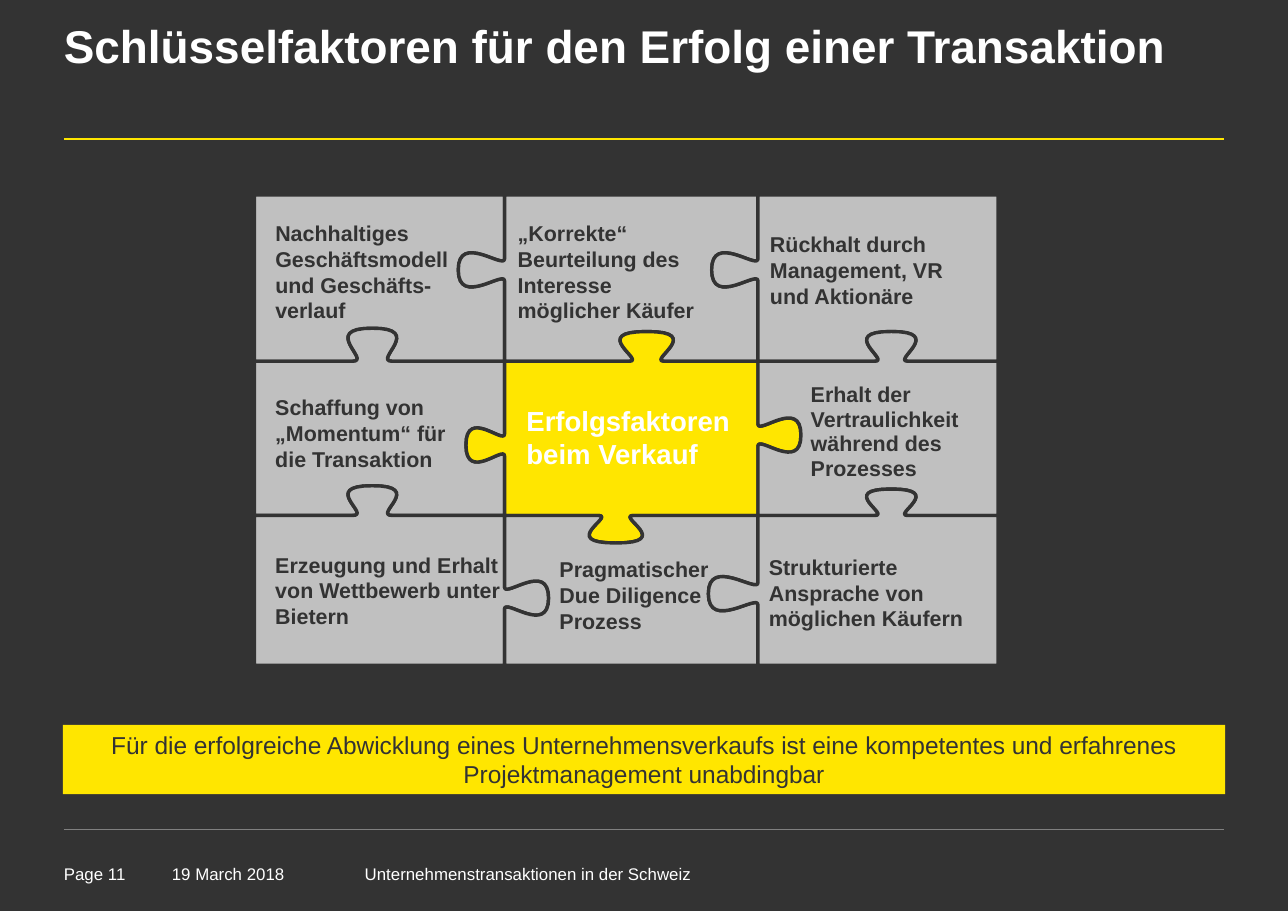
"""Build the puzzle slide on success factors of a company sale."""
import dataclasses
import itertools

import pptx
import pptx.dml.color
import pptx.enum.shapes
import pptx.enum.text
import pptx.oxml.ns
import pptx.util

EMU_PER_PX = 9144
DARK, GREY, YELLOW, WHITE, RULE_GREY = "333333", "C0C0C0", "FFE600", "FFFFFF", "808080"
COLUMN_EDGES = (231, 458, 688, 906)
ROW_EDGES = (177, 328, 468, 604)
CURVE_STEPS = 16
CENTER = pptx.enum.text.PP_ALIGN.CENTER
MIDDLE = pptx.enum.text.MSO_ANCHOR.MIDDLE

Point = tuple[float, float]


@dataclasses.dataclass(frozen=True)
class Knob:
    """A bulge in a seam; centre and reach run along it, tip lies across it."""
    upright: bool
    seam: int
    lane: int
    centre: int
    tip: int
    half: int = 10
    reach: int = 34


@dataclasses.dataclass(frozen=True)
class Label:
    """A block of text with its place in px and its look."""
    text: str
    left: int
    top: int
    width: int
    height: int
    size: int = 14
    color: str = DARK
    bold: bool = True
    spacing: float | None = None
    inset: tuple[int, int] = (10, 5)


@dataclasses.dataclass(frozen=True)
class Rule:
    """A horizontal line across the page."""
    top: int
    color: str
    weight: float


KNOBS = (
    Knob(True, 1, 0, 245, 416),
    Knob(True, 1, 1, 404, 423),
    Knob(True, 1, 2, 543, 498),
    Knob(True, 2, 0, 245, 646),
    Knob(True, 2, 1, 395, 727),
    Knob(True, 2, 2, 539, 643),
    Knob(False, 1, 0, 338, 298, 18, 48),
    Knob(False, 1, 1, 587, 301, 16, 53),
    Knob(False, 1, 2, 809, 301, 15, 49),
    Knob(False, 2, 0, 338, 441, 18, 48),
    Knob(False, 2, 1, 559, 493, 16, 53),
    Knob(False, 2, 2, 809, 444, 15, 49),
)
KNOB_AT = {(knob.upright, knob.seam, knob.lane): knob for knob in KNOBS}

RULES = (Rule(126, YELLOW, 1.5), Rule(753, RULE_GREY, 0.25))

FOOTER = {"size": 11, "color": WHITE, "bold": False, "inset": (0, 0)}
LABELS = (
    Label("Schlüsselfaktoren für den Erfolg einer Transaktion", 58, 24, 1052, 104,
          30, WHITE, spacing=0.85, inset=(0, 0)),
    Label("Nachhaltiges Geschäftsmodell und Geschäfts-verlauf", 240, 195, 192, 104),
    Label("„Korrekte“ Beurteilung des Interesse möglicher Käufer", 460, 195, 197, 104),
    Label("Rückhalt durch Management, VR und Aktionäre", 689, 205, 217, 81),
    Label("Schaffung von „Momentum“ für\ndie Transaktion", 240, 353, 226, 81),
    Label("Erfolgsfaktoren beim Verkauf", 468, 362, 213, 71, 18, WHITE),
    Label("Erhalt der Vertraulichkeit während des Prozesses", 726, 343, 179, 100,
          spacing=0.95),
    Label("Erzeugung und Erhalt von Wettbewerb unter Bietern", 240, 496, 226, 81),
    Label("Pragmatischer Due Diligence Prozess", 498, 500, 157, 81),
    Label("Strukturierte Ansprache von möglichen Käufern", 688, 498, 217, 81),
    Label("Page 11", 58, 784, 92, 24, **FOOTER),
    Label("19 March 2018", 156, 784, 152, 24, **FOOTER),
    Label("Unternehmenstransaktionen in der Schweiz", 331, 784, 439, 24, **FOOTER),
)
BANNER = Label("Für die erfolgreiche Abwicklung eines Unternehmensverkaufs ist eine "
               "kompetentes und erfahrenes Projektmanagement unabdingbar",
               57, 658, 1055, 63, 16, bold=False)


def px(length: float) -> pptx.util.Emu:
    """Turn px into EMU."""
    return pptx.util.Emu(round(length * EMU_PER_PX))


def rgb(color: str) -> pptx.dml.color.RGBColor:
    """Turn a hex string into a colour."""
    return pptx.dml.color.RGBColor.from_string(color)


def apply(target, values: dict) -> None:
    """Set each named attribute on the target."""
    for name, value in values.items():
        setattr(target, name, value)


def paint(fill, color: str) -> None:
    """Make a fill solid in one colour."""
    fill.solid()
    fill.fore_color.rgb = rgb(color)


def bezier(points: tuple[Point, ...]) -> list[Point]:
    """Sample a cubic curve, leaving out its start."""
    samples = []
    for step in range(1, CURVE_STEPS + 1):
        t = step / CURVE_STEPS
        weights = ((1 - t) ** 3, 3 * t * (1 - t) ** 2, 3 * t * t * (1 - t), t ** 3)
        samples.append(tuple(sum(weight * point[axis] for weight, point in zip(weights, points))
                             for axis in (0, 1)))
    return samples


def side(upright: bool, seam: int, lane: int) -> list[Point]:
    """Trace one side of a piece downwards or to the right."""
    across, along = (COLUMN_EDGES, ROW_EDGES) if upright else (ROW_EDGES, COLUMN_EDGES)
    base = across[seam]
    trace = [(along[lane], base)]
    knob = KNOB_AT.get((upright, seam, lane))
    if knob:
        centre, tip, half, reach = knob.centre, knob.tip, knob.half, knob.reach
        start, top, end = (centre - half, base), (centre, tip), (centre + half, base)
        trace.append(start)
        trace += bezier((start, (centre, base), (centre - reach, tip), top))
        trace += bezier((top, (centre + reach, tip), (centre, base), end))
    trace.append((along[lane + 1], base))
    return [(y, x) for x, y in trace] if upright else trace


def draw_piece(page, row: int, column: int, color: str) -> None:
    """Draw one puzzle piece with its four sides."""
    outline = (side(False, row, column) + side(True, column + 1, row)
               + side(False, row + 1, column)[::-1] + side(True, column, row)[::-1])
    points = [(px(x), px(y)) for x, y in outline]
    builder = page.shapes.build_freeform(*points[0], scale=1.0)
    builder.add_line_segments(points[1:], close=True)
    piece = builder.convert_to_shape()
    piece.shadow.inherit = False
    paint(piece.fill, color)
    paint(piece.line.fill, DARK)
    piece.line.width = pptx.util.Pt(2.25)


def write(box, label: Label, frame_format: dict, para_format: dict) -> None:
    """Fill a box with the text of a label."""
    across, down = (px(inset) for inset in label.inset)
    apply(box.text_frame, {"word_wrap": True, "margin_left": across, "margin_right": across,
                           "margin_top": down, "margin_bottom": down, **frame_format})
    para = box.text_frame.paragraphs[0]
    para.text = label.text
    apply(para, {"line_spacing": label.spacing, **para_format})
    for span in para.runs:
        apply(span.font, {"name": "Arial", "size": pptx.util.Pt(label.size), "bold": label.bold})
        span.font.color.rgb = rgb(label.color)


def place(label: Label) -> tuple:
    """Give the position and size of a label in EMU."""
    return tuple(map(px, (label.left, label.top, label.width, label.height)))


def draw_rule(page, rule: Rule) -> None:
    """Draw a horizontal line between the page margins."""
    line = page.shapes.add_connector(pptx.enum.shapes.MSO_CONNECTOR.STRAIGHT,
                                     px(58), px(rule.top), px(1111), px(rule.top))
    paint(line.line.fill, rule.color)
    line.line.width = pptx.util.Pt(rule.weight)
    properties = line._element.spPr
    properties.append(properties.makeelement(pptx.oxml.ns.qn("a:effectLst"), {}))


def draw_banner(page, label: Label) -> None:
    """Draw the closing statement on a yellow bar."""
    bar = page.shapes.add_shape(pptx.enum.shapes.MSO_SHAPE.RECTANGLE, *place(label))
    bar.shadow.inherit = False
    paint(bar.fill, YELLOW)
    bar.line.fill.background()
    write(bar, label, {"vertical_anchor": MIDDLE}, {"alignment": CENTER})


def main() -> None:
    """Build and save the deck."""
    deck = pptx.Presentation()
    apply(deck, {"slide_width": px(1169), "slide_height": px(827)})
    page = deck.slides.add_slide(deck.slide_layouts[6])
    paint(page.background.fill, DARK)
    for rule in RULES:
        draw_rule(page, rule)
    for row, column in itertools.product(range(3), repeat=2):
        draw_piece(page, row, column, YELLOW if row == column == 1 else GREY)
    for label in LABELS:
        write(page.shapes.add_textbox(*place(label)), label, {}, {})
    draw_banner(page, BANNER)
    deck.save("out.pptx")


if __name__ == "__main__":
    main()
